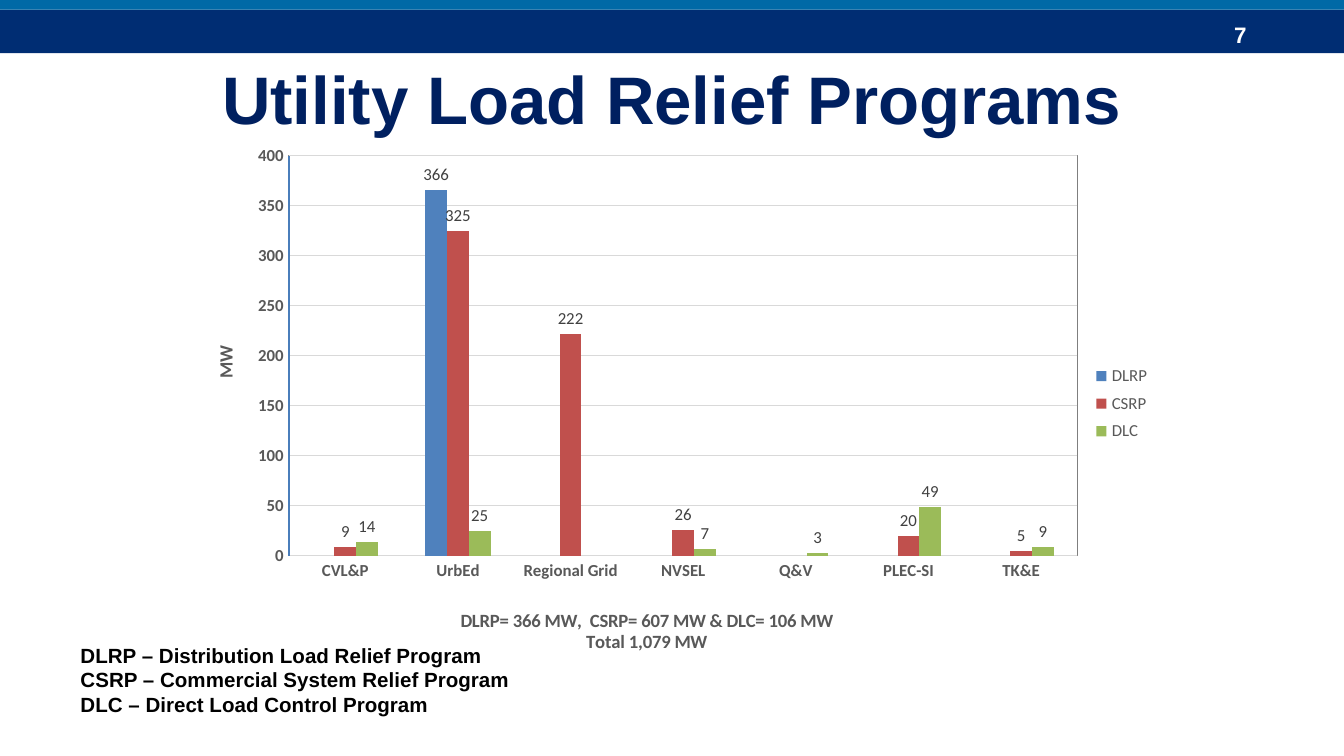
import dataclasses
import typing

import lxml.etree
import pptx
import pptx.chart.data
import pptx.dml.color
import pptx.enum.chart
import pptx.enum.shapes
import pptx.enum.text
import pptx.oxml
import pptx.oxml.ns
import pptx.util

PX = 9525  # EMU per px, 96 px to the inch
HUES = {
    "navy": "002D73", "blue": "0069A6", "title": "002060", "white": "FFFFFF",
    "black": "000000", "label": "404040", "axis": "595959", "grid": "D9D9D9",
    "edge": "7F7F7F", "side": "4A7EBB",
    "DLRP": "4F81BD", "CSRP": "C0504D", "DLC": "9BBB59",
}
NAMES = ["CVL&P", "UrbEd", "Regional Grid", "NVSEL", "Q&V", "PLEC-SI", "TK&E"]
LOADS = {
    "DLRP": [None, 366, None, None, None, None, None],
    "CSRP": [9, 325, 222, 26, None, 20, 5],
    "DLC": [14, 25, None, 7, 3, 49, 9],
}
SUMS = ["DLRP= 366 MW,  CSRP= 607 MW & DLC= 106 MW", "Total 1,079 MW"]
TERMS = [
    "DLRP – Distribution Load Relief Program",
    "CSRP – Commercial System Relief Program",
    "DLC – Direct Load Control Program",
]


@dataclasses.dataclass(frozen=True)
class Box:
    left: int
    top: int
    width: int
    height: int

    def emu(self) -> list[int]:
        return [n * PX for n in dataclasses.astuple(self)]


@dataclasses.dataclass(frozen=True)
class Style:
    size: int
    hue: str
    bold: bool = True
    face: str = "Arial"


BANDS = [(Box(0, 7, 960, 31), "navy"), (Box(0, 0, 960, 7), "blue")]
AXIS = Style(9, "axis", True, "Calibri")
HEAD = Style(10, "axis", True, "Calibri")
LABEL = Style(9, "label", False, "Calibri")
KEY = Style(9, "axis", False, "Calibri")


def tint(hue: str) -> pptx.dml.color.RGBColor:
    return pptx.dml.color.RGBColor.from_string(HUES[hue])


def dress(font: typing.Any, style: Style) -> None:
    font.size = pptx.util.Pt(style.size)
    font.bold = style.bold
    font.name = style.face
    font.color.rgb = tint(style.hue)


def write(frame: typing.Any, lines: list[str], style: Style,
          align: typing.Any = None) -> None:
    for i, line in enumerate(lines):
        para = frame.add_paragraph() if i else frame.paragraphs[0]
        para.alignment = align
        run = para.add_run()
        run.text = line
        dress(run.font, style)


def draw_band(slide: typing.Any, box: Box, hue: str) -> None:
    band = slide.shapes.add_shape(
        pptx.enum.shapes.MSO_SHAPE.RECTANGLE, *box.emu())
    band.shadow.inherit = False
    band.fill.solid()
    band.fill.fore_color.rgb = tint(hue)
    band.line.fill.background()


def draw_text(slide: typing.Any, box: Box, lines: list[str], style: Style) -> None:
    frame = slide.shapes.add_textbox(*box.emu()).text_frame
    frame.word_wrap = True
    frame.vertical_anchor = pptx.enum.text.MSO_ANCHOR.MIDDLE
    write(frame, lines, style)


def place(part: typing.Any, after: str, **spots: typing.Any) -> None:
    """Give a chart part a manual layout, put behind its child `after`."""
    name = pptx.oxml.ns.qn
    for old in part.findall(name("c:layout")):
        part.remove(old)
    layout = lxml.etree.Element(name("c:layout"))
    manual = lxml.etree.SubElement(layout, name("c:manualLayout"))
    for tag, value in spots.items():
        lxml.etree.SubElement(manual, name("c:" + tag)).set("val", str(value))
    prior = part.find(name(after)) if after else None
    part.insert(0 if prior is None else part.index(prior) + 1, layout)


def head_axis(axis: typing.Any, lines: list[str], x: float, y: float) -> None:
    title = axis.axis_title
    write(title.text_frame, lines, HEAD, pptx.enum.text.PP_ALIGN.CENTER)
    place(title._element, "c:tx", xMode="edge", yMode="edge", x=x, y=y)


def set_axis(axis: typing.Any, hue: str) -> None:
    none = pptx.enum.chart.XL_TICK_MARK.NONE
    axis.major_tick_mark = axis.minor_tick_mark = none
    axis.format.line.color.rgb = tint(hue)
    axis.format.line.width = pptx.util.Pt(0.75)
    dress(axis.tick_labels.font, AXIS)


def draw_chart(slide: typing.Any, box: Box) -> None:
    data = pptx.chart.data.CategoryChartData(number_format="0")
    data.categories = NAMES
    for name, loads in LOADS.items():
        data.add_series(name, loads)
    chart = slide.shapes.add_chart(
        pptx.enum.chart.XL_CHART_TYPE.COLUMN_CLUSTERED, *box.emu(), data).chart
    chart.has_title = False
    dress(chart.font, Style(10, "black", False, "Calibri"))

    plot = chart.plots[0]
    plot.gap_width, plot.overlap = 219, 0
    plot.vary_by_categories = False
    for bar in plot.series:
        bar.format.fill.solid()
        bar.format.fill.fore_color.rgb = tint(bar.name)
        marks = bar.data_labels
        marks.show_value = True
        marks.position = pptx.enum.chart.XL_LABEL_POSITION.OUTSIDE_END
        marks.number_format, marks.number_format_is_linked = "0", False
        dress(marks.font, LABEL)

    cats, vals = chart.category_axis, chart.value_axis
    set_axis(cats, "grid")
    head_axis(cats, SUMS, 0.28, 0.88)
    set_axis(vals, "side")
    head_axis(vals, ["MW"], 0.03, 0.39)
    turn = vals.axis_title.text_frame._txBody.bodyPr
    turn.set("rot", "-5400000")
    turn.set("vert", "horz")
    vals.minimum_scale, vals.maximum_scale, vals.major_unit = 0, 400, 50
    vals.tick_labels.number_format = "0"
    vals.tick_labels.number_format_is_linked = False
    vals.major_gridlines.format.line.color.rgb = tint("grid")
    vals.major_gridlines.format.line.width = pptx.util.Pt(0.75)

    chart.has_legend = True
    chart.legend.position = pptx.enum.chart.XL_LEGEND_POSITION.RIGHT
    chart.legend.include_in_layout = False
    dress(chart.legend.font, KEY)
    place(chart.legend._element, "c:legendPos", xMode="edge", yMode="edge",
          x=0.92, y=0.42, w=0.07, h=0.17)

    area = chart._chartSpace.chart.plotArea
    place(area, "", layoutTarget="inner", xMode="edge", yMode="edge",
          x=0.11, y=0.04, w=0.8, h=0.75)
    area.append(pptx.oxml.parse_xml(
        f'<c:spPr {pptx.oxml.ns.nsdecls("c", "a")}><a:noFill/><a:ln w="9525">'
        f'<a:solidFill><a:srgbClr val="{HUES["edge"]}"/></a:solidFill>'
        '</a:ln></c:spPr>'))


def main() -> None:
    deck = pptx.Presentation()
    deck.slide_width, deck.slide_height = 960 * PX, 540 * PX
    slide = deck.slides.add_slide(deck.slide_layouts[5])
    for box, hue in BANDS:
        draw_band(slide, box, hue)
    draw_text(slide, Box(872, 10, 72, 29), ["7"], Style(12, "white"))
    draw_chart(slide, Box(129, 96, 704, 381))

    title = slide.shapes.title
    title.left, title.top, title.width, title.height = Box(48, 33, 864, 74).emu()
    title.text_frame.vertical_anchor = pptx.enum.text.MSO_ANCHOR.MIDDLE
    write(title.text_frame, ["Utility Load Relief Programs"],
          Style(36, "title"), pptx.enum.text.PP_ALIGN.CENTER)
    draw_text(slide, Box(48, 454, 352, 63), TERMS, Style(11, "black"))
    deck.save("out.pptx")


if __name__ == "__main__":
    main()
